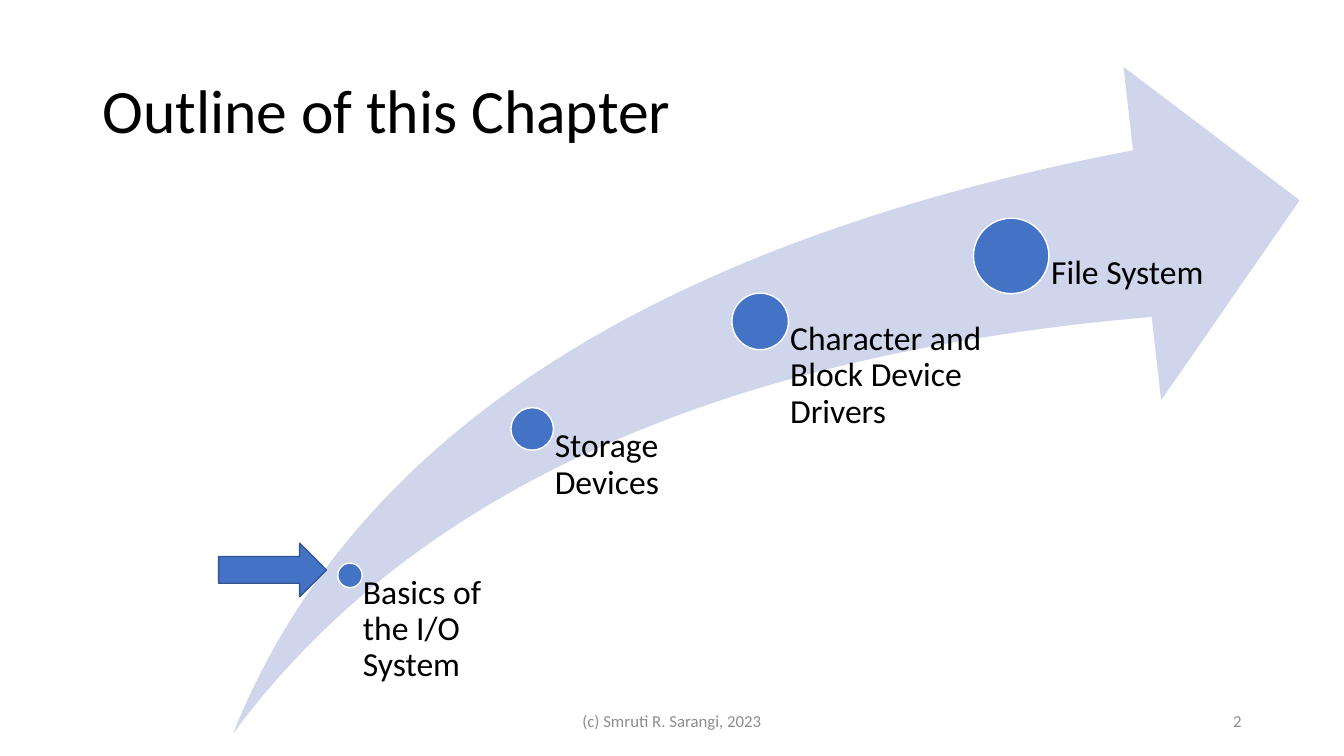
from dataclasses import dataclass

import pptx
import pptx.dml.color
import pptx.enum.shapes
import pptx.enum.text
import pptx.shapes.autoshape
import pptx.slide
import pptx.util

Pt = pptx.util.Pt
Shape = pptx.enum.shapes.MSO_SHAPE
Align = pptx.enum.text.PP_ALIGN
Anchor = pptx.enum.text.MSO_ANCHOR

BLUE = "4472C4"
BLACK = "000000"
GREY = "8C8C8C"
SWOOSH_BOTTOM = 524


@dataclass(frozen=True)
class Frame:
    left: float
    top: float
    width: float
    height: float

    def lengths(self) -> tuple:
        return Pt(self.left), Pt(self.top), Pt(self.width), Pt(self.height)


@dataclass(frozen=True)
class Label:
    text: str
    frame: Frame
    size: float
    color: str = BLACK
    align: Align = Align.LEFT
    anchor: Anchor = Anchor.MIDDLE
    spacing: float = 1.0
    insets: tuple[float, float, float, float] = (7.2, 3.6, 7.2, 3.6)


@dataclass(frozen=True)
class Topic:
    text: str
    center_x: float
    center_y: float
    diameter: float
    label_width: float


TOPICS = [
    Topic("Basics of the I/O System", 250, 411, 17.5, 129),
    Topic("Storage Devices", 380.2, 306.4, 30.4, 160),
    Topic("Character and Block Device Drivers", 543, 229.6, 40.4, 160),
    Topic("File System", 722.3, 182.8, 53.9, 160),
]

LABELS = [
    Label("Outline of this Chapter", Frame(66, 28.75, 828, 104.4), 44, spacing=0.9),
    Label("(c) Smruti R. Sarangi, 2023", Frame(318, 500.5, 324, 28.75), 12, GREY, Align.CENTER),
    Label("2", Frame(678, 500.5, 216, 28.75), 12, GREY, Align.RIGHT),
]


def rgb(value: str) -> pptx.dml.color.RGBColor:
    return pptx.dml.color.RGBColor.from_string(value)


def add_figure(page: pptx.slide.Slide, kind: Shape, frame: Frame, fill: str,
               line: str | None = None) -> pptx.shapes.autoshape.Shape:
    figure = page.shapes.add_shape(kind, *frame.lengths())
    figure.shadow.inherit = False
    figure.fill.solid()
    figure.fill.fore_color.rgb = rgb(fill)
    if line is None:
        figure.line.fill.background()
    else:
        figure.line.color.rgb = rgb(line)
        figure.line.width = Pt(1)
    return figure


def add_label(page: pptx.slide.Slide, label: Label) -> None:
    box = page.shapes.add_textbox(*label.frame.lengths())
    frame = box.text_frame
    frame.word_wrap = True
    frame.vertical_anchor = label.anchor
    (frame.margin_left, frame.margin_top,
     frame.margin_right, frame.margin_bottom) = map(Pt, label.insets)
    para = frame.paragraphs[0]
    para.text = label.text
    para.alignment = label.align
    para.line_spacing = label.spacing
    para.font.name = "Calibri"
    para.font.size = Pt(label.size)
    para.font.color.rgb = rgb(label.color)


def add_topic(page: pptx.slide.Slide, topic: Topic) -> None:
    radius = topic.diameter / 2
    dot = Frame(topic.center_x - radius, topic.center_y - radius, topic.diameter, topic.diameter)
    add_figure(page, Shape.OVAL, dot, BLUE, "FFFFFF")
    area = Frame(topic.center_x, topic.center_y, topic.label_width, SWOOSH_BOTTOM - topic.center_y)
    add_label(page, Label(topic.text, area, 24, anchor=Anchor.TOP, spacing=0.9,
                          insets=(topic.diameter * 0.53, 0, 0, 0)))


def main() -> None:
    deck = pptx.Presentation()
    deck.slide_width, deck.slide_height = Pt(960), Pt(540)
    page = deck.slides.add_slide(deck.slide_layouts[6])

    swoosh = add_figure(page, Shape.SWOOSH_ARROW, Frame(166.5, 47.8, 761.8, 476.2), "CFD5EA")
    swoosh.adjustments[0] = 0.25
    swoosh.adjustments[1] = 0.25

    for topic in TOPICS:
        add_topic(page, topic)
    add_figure(page, Shape.RIGHT_ARROW, Frame(156.2, 388, 77, 38.2), BLUE, "325491")
    for label in LABELS:
        add_label(page, label)

    deck.save("out.pptx")


if __name__ == "__main__":
    main()
